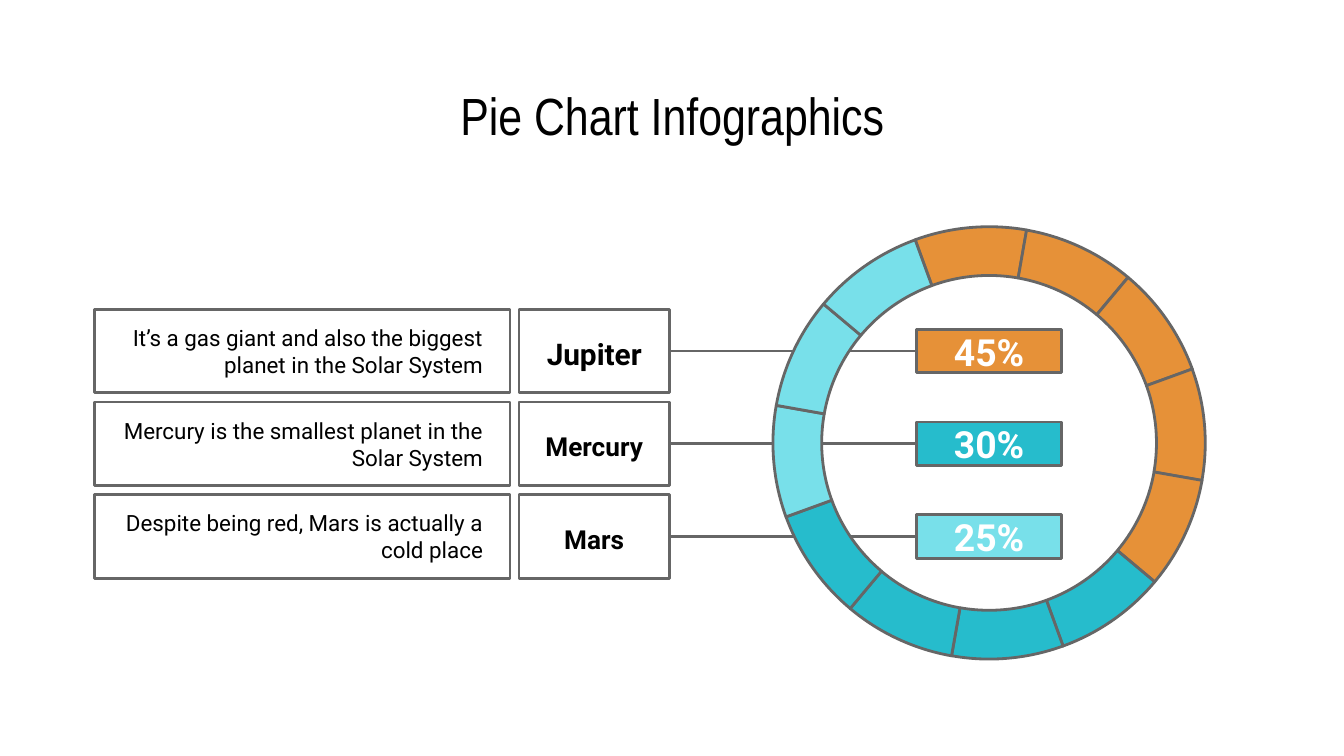
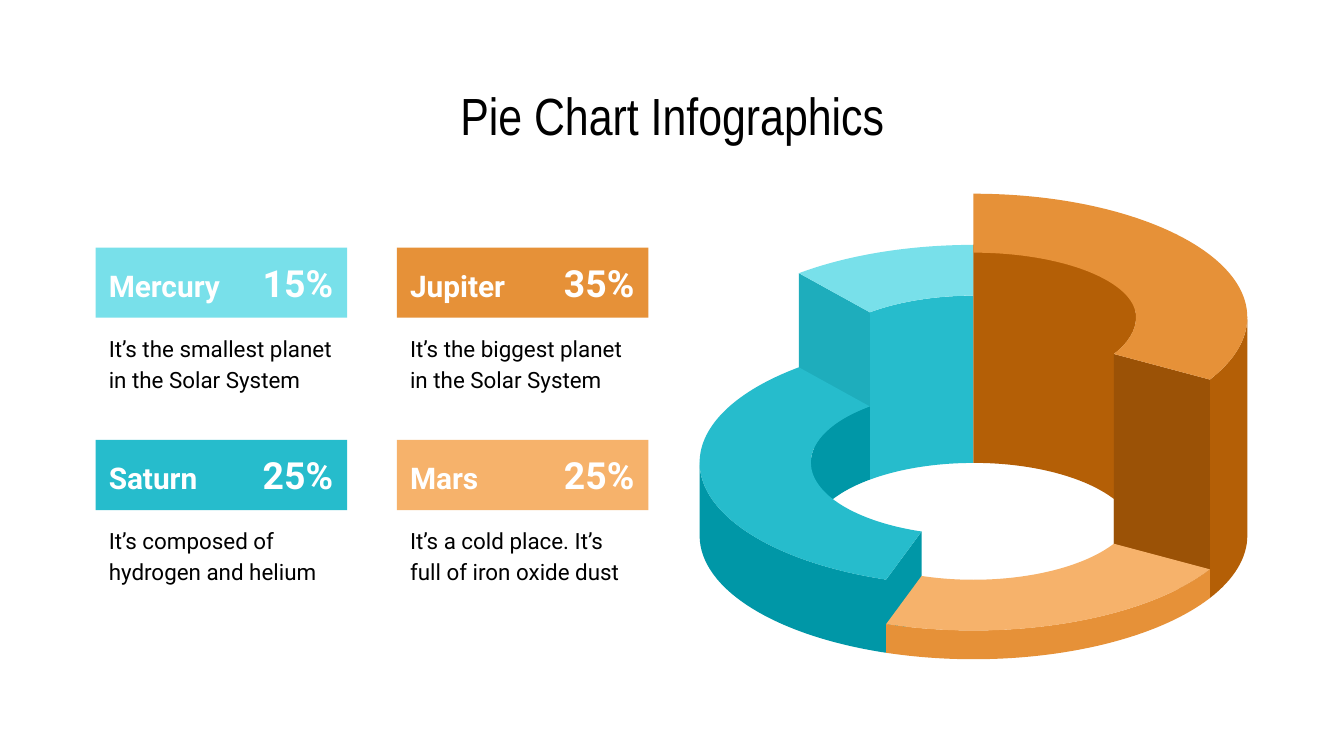
from math import cos, radians, sin, tan

from lxml import etree
from pptx import Presentation
from pptx.dml.color import RGBColor
from pptx.enum.shapes import MSO_CONNECTOR, MSO_SHAPE
from pptx.enum.text import MSO_ANCHOR, MSO_AUTO_SIZE, PP_ALIGN
from pptx.oxml.ns import qn
from pptx.util import Pt

LEFT, CENTER, RIGHT = PP_ALIGN.LEFT, PP_ALIGN.CENTER, PP_ALIGN.RIGHT
TOP, MIDDLE = MSO_ANCHOR.TOP, MSO_ANCHOR.MIDDLE
RECT, STRAIGHT = MSO_SHAPE.RECTANGLE, MSO_CONNECTOR.STRAIGHT

COLORS = {
    "black": "000000", "white": "FFFFFF", "gray": "666666",
    "orange": "E69138", "peach": "F6B26B", "rust": "B45F06", "brown": "9B5206",
    "aqua": "78E0EA", "teal": "26BCCC", "mid_teal": "1EADBC", "deep_teal": "0097A7",
}
RGB = {name: RGBColor.from_string(value) for name, value in COLORS.items()}
LINE_WIDTH = Pt(1.5)


def add_box(s, x, y, w, h, text, size, color="black", bold=False, align=LEFT,
            anchor=MIDDLE, fill=None, line=None, spacing=None, inset=7.2):
    """Add a rectangle, or a text box if it has neither fill nor line."""
    frame = Pt(x), Pt(y), Pt(w), Pt(h)
    if fill or line:
        sp = s.shapes.add_shape(RECT, *frame)
        sp.shadow.inherit = False
    else:
        sp = s.shapes.add_textbox(*frame)
    if fill:
        sp.fill.solid()
        sp.fill.fore_color.rgb = RGB[fill]
    else:
        sp.fill.background()
    if line:
        sp.line.color.rgb = RGB[line]
        sp.line.width = LINE_WIDTH
    else:
        sp.line.fill.background()
    tf = sp.text_frame
    tf.word_wrap = True
    tf.vertical_anchor = anchor
    tf.margin_left = tf.margin_right = Pt(inset)
    tf.margin_top = tf.margin_bottom = Pt(7.2)
    tf.text = text
    p = tf.paragraphs[0]
    p.alignment = align
    if spacing:
        p.line_spacing = spacing
    font = p.runs[0].font
    font.name, font.size, font.bold = "Roboto", Pt(size), bold
    font.color.rgb = RGB[color]
    return sp


def add_face(s, fill, center_x, arcs, line=None):
    """Join arcs (center y, radii, start, end), angles clockwise from the top."""
    points, controls = [], []
    for center_y, (rx, ry), start, end in arcs:
        # Split at the quarters, so that the end points span the whole face
        quarters = [a for a in range(0, 360, 90) if min(start, end) < a < max(start, end)]
        stops = sorted({start, end, *quarters}, reverse=end < start)
        for k, stop in enumerate(stops):
            a = radians(stop)
            x, y = center_x + rx * sin(a), center_y - ry * cos(a)
            slope_x, slope_y = rx * cos(a), ry * sin(a)
            if k:
                t = 4 / 3 * tan((a - last_a) / 4)
                controls.append([(last_x + t * last_sx, last_y + t * last_sy),
                                 (x - t * slope_x, y - t * slope_y)])
            else:
                controls.append([])
            points.append((Pt(x), Pt(y)))
            last_a, last_x, last_y, last_sx, last_sy = a, x, y, slope_x, slope_y
    builder = s.shapes.build_freeform(*points[0], scale=1.0)
    builder.add_line_segments(points[1:], close=True)
    sp = builder.convert_to_shape()
    # Bend the arc segments
    for segment, pair in zip(list(sp._element.iter(qn("a:lnTo"))), controls[1:]):
        if pair:
            segment.tag = qn("a:cubicBezTo")
            for k, (x, y) in enumerate(pair):
                segment.insert(k, etree.Element(qn("a:pt"), x=str(Pt(x) - sp.left),
                                                y=str(Pt(y) - sp.top)))
    sp.shadow.inherit = False
    sp.fill.solid()
    sp.fill.fore_color.rgb = RGB[fill]
    if line:
        sp.line.color.rgb = RGB[line]
        sp.line.width = LINE_WIDTH
    else:
        sp.line.fill.background()


prs = Presentation()
prs.slide_width, prs.slide_height = Pt(720), Pt(405)

# Slides with their shared title
slides = []
for _ in range(2):
    s = prs.slides.add_slide(prs.slide_layouts[5])
    title = s.shapes.title
    title.left, title.top, title.width, title.height = Pt(225), Pt(42.5), Pt(270), Pt(38.2)
    tf = title.text_frame
    tf.text = "Pie Chart Infographics"
    tf.auto_size = MSO_AUTO_SIZE.NONE
    tf.vertical_anchor = MIDDLE
    tf.margin_left = tf.margin_right = tf.margin_top = tf.margin_bottom = Pt(7.2)
    p = tf.paragraphs[0]
    p.alignment = CENTER
    font = p.runs[0].font
    font.name, font.size = "Arial Narrow", Pt(28)
    font.color.rgb = RGB["black"]
    slides.append(s)

# Slide 1: planet rows, each joined to its share
s = slides[0]
planets = [
    ("Jupiter", 16, "45%", "orange",
     "It’s a gas giant and also the biggest planet in the Solar System"),
    ("Mercury", 14, "30%", "teal", "Mercury is the smallest planet in the Solar System"),
    ("Mars", 14, "25%", "aqua", "Despite being red, Mars is actually a cold place"),
]
row_h, share_h = 44.7, 23.3
for i, (name, size, share, color, text) in enumerate(planets):
    y = 165.75 + 49.65 * i
    mid = y + row_h / 2
    link = s.shapes.add_connector(STRAIGHT, Pt(358.7), Pt(mid), Pt(491), Pt(mid))
    link.line.color.rgb = RGB["gray"]
    link.line.width = LINE_WIDTH
    etree.SubElement(link._element.spPr, qn("a:effectLst"))
    label = add_box(s, 278, y, 80.7, row_h, name, size, bold=True, align=CENTER,
                    fill="white", line="gray", spacing=1.15)
    add_box(s, 50.6, y, 222.6, row_h, text, 12, align=RIGHT, line="gray", inset=14.4)
    value = add_box(s, 491, mid - share_h / 2, 77.8, share_h, share, 20, "white", True,
                    CENTER, fill=color, line="gray")
    link.begin_connect(label, 3)
    link.end_connect(value, 1)

# Slide 1: ring of twelve equal segments
segment_colors = ["orange"] * 5 + ["teal"] * 4 + ["aqua"] * 3
step = 360 / len(segment_colors)
for i, color in enumerate(segment_colors):
    start = -20 + step * i
    add_face(s, color, 529.9, [(237.3, (115.8, 115.8), start, start + step),
                               (237.3, (89.7, 89.7), start + step, start)], "gray")

# Slide 2: stepped ring, with the height of each top and the angles between planets
s = slides[1]
ring_x, base = 521.5, 287
jupiter, mercury, saturn, mars = 170, 197.4, 247.8, 271.6
outer, inner, inner_back = (146.7, 66.2), (87.1, 39), (87.1, 34.6)
a_mars, a_saturn, a_mercury = 120.3, 198.6, 320.4

# Each wall: colour, height of its top, radii, start and end angle
walls = {
    "mercury": [("teal", mercury, inner, a_mercury, 360)],
    "jupiter": [("rust", jupiter, inner, 0, a_mars), ("rust", jupiter, outer, 90, a_mars)],
    "saturn": [("deep_teal", saturn, inner, 270, a_mercury),
               ("deep_teal", saturn, outer, a_saturn, 270)],
    "mars": [("orange", mars, outer, a_mars, a_saturn)],
}
# Each cut: colour, height of its top, angle
cuts = {
    "mercury": ("mid_teal", mercury, a_mercury),
    "jupiter": ("brown", jupiter, a_mars),
    "saturn": ("deep_teal", saturn, a_saturn),
}
tops = {
    "mercury": ("aqua", [(mercury, outer, a_mercury, 360), (mercury, inner, 360, a_mercury)]),
    "jupiter": ("orange", [(jupiter, outer, 0, a_mars), (jupiter, inner, a_mars, 90),
                           (jupiter, inner_back, 90, 0)]),
    "saturn": ("teal", [(saturn, outer, a_saturn, a_mercury),
                        (saturn, inner, a_mercury, a_saturn)]),
    "mars": ("peach", [(mars, outer, a_mars, a_saturn), (mars, inner, a_saturn, a_mars)]),
}
for planet, (top_color, top_arcs) in tops.items():
    for color, level, radii, start, end in walls[planet]:
        add_face(s, color, ring_x, [(level, radii, start, end), (base, radii, end, start)])
    if planet in cuts:
        color, level, a = cuts[planet]
        add_face(s, color, ring_x, [(level, outer, a, a), (level, inner, a, a),
                                    (base, inner, a, a), (base, outer, a, a)])
    add_face(s, top_color, ring_x, top_arcs)

# Slide 2: two by two planet cards
cards = [
    ("Mercury", "15%", "aqua", "It’s the smallest planet in the Solar System"),
    ("Jupiter", "35%", "orange", "It’s the biggest planet in the Solar System"),
    ("Saturn", "25%", "teal", "It’s composed of hydrogen and helium"),
    ("Mars", "25%", "peach", "It’s a cold place. It’s full of iron oxide dust"),
]
for i, (name, share, color, text) in enumerate(cards):
    x, y = 51.2 + 161.4 * (i % 2), 132.7 + 103 * (i // 2)
    add_box(s, x, y, 134.8, 37.6, name, 16, "white", True, fill=color, spacing=1.15)
    add_box(s, x, y + 37.6, 135.4, 44.6, text, 12, anchor=TOP, spacing=1.15)
    add_box(s, x + 64.6, y + 5.4, 69.8, 26.6, share, 20, "white", True, RIGHT)

prs.save("out.pptx")
